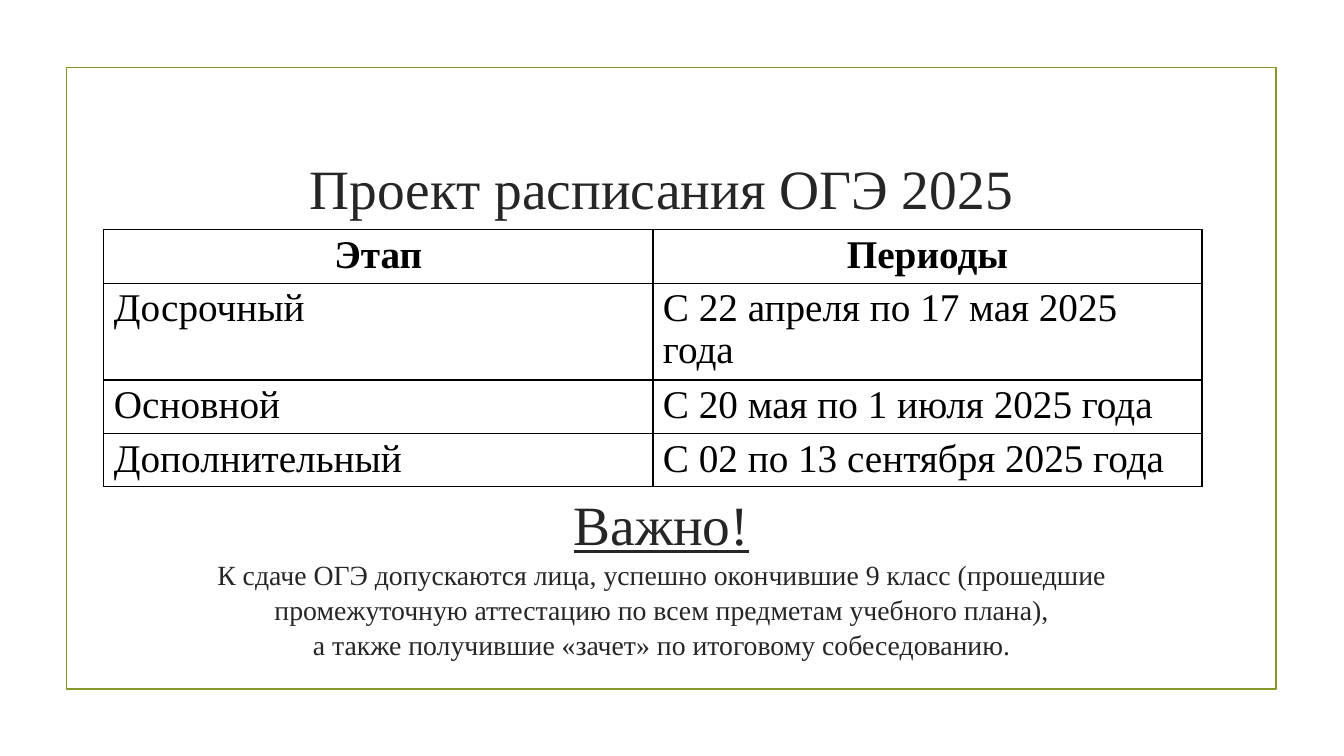
import pptx
import pptx.util
import pptx.dml.color
import pptx.enum.shapes
import pptx.enum.text
import pptx.oxml.ns
import lxml.etree

WIDE, HIGH = 13.33, 7.5
FACE = "Times New Roman"
INK, BLACK, WHITE, GREEN = "262626", "000000", "FFFFFF", "83992A"
LEFT = pptx.enum.text.PP_ALIGN.LEFT
MID = pptx.enum.text.PP_ALIGN.CENTER
STAGES = [
    ("Этап", "Периоды"),
    ("Досрочный", "С 22 апреля по 17 мая 2025 года"),
    ("Основной", "С 20 мая по 1 июля 2025 года"),
    ("Дополнительный", "С 02 по 13 сентября 2025 года"),
]
NOTES = [
    "К сдаче ОГЭ допускаются лица, успешно окончившие 9 класс (прошедшие "
    "промежуточную аттестацию по всем предметам учебного плана),",
    "а также получившие «зачет» по итоговому собеседованию.",
]


def tint(code):
    return pptx.dml.color.RGBColor.from_string(code)


def across(share):
    return pptx.util.Inches(WIDE * share / 100)


def down(share):
    return pptx.util.Inches(HIGH * share / 100)


def area(x, y, w, h):
    return across(x), down(y), across(w), down(h)


def write(para, text, size=28, color=INK, align=MID, bold=False, under=False, pitch=1.0):
    para.alignment = align
    para.line_spacing = pitch
    para.space_before = para.space_after = pptx.util.Pt(0)
    run = para.add_run()
    run.text = text
    font = run.font
    font.name, font.size = FACE, pptx.util.Pt(size)
    font.bold, font.underline = bold, under
    font.color.rgb = tint(color)


def add(node, tag, **attrs):
    return lxml.etree.SubElement(node, pptx.oxml.ns.qn(tag), **attrs)


def plain(para):
    props = para._p.get_or_add_pPr()
    props.set("marL", "0")
    props.set("indent", "0")
    add(props, "a:buNone")


def seat(holder, box, anchor):
    holder.left, holder.top, holder.width, holder.height = box
    frame = holder.text_frame
    frame.word_wrap = True
    frame.auto_size = pptx.enum.text.MSO_AUTO_SIZE.NONE
    frame.vertical_anchor = anchor
    frame.margin_top = frame.margin_bottom = 0
    return frame


def edge(cell):
    props = cell._tc.get_or_add_tcPr()
    for side in ("a:lnL", "a:lnR", "a:lnT", "a:lnB"):
        line = add(props, side, w=str(pptx.util.Pt(1)))
        add(add(line, "a:solidFill"), "a:srgbClr", val=BLACK)


def border(slide):
    rect = slide.shapes.add_shape(
        pptx.enum.shapes.MSO_SHAPE.RECTANGLE, *area(4.95, 8.93, 90, 82.27))
    rect.shadow.inherit = False
    rect.fill.background()
    rect.line.color.rgb = tint(GREEN)
    rect.line.width = pptx.util.Pt(1.25)


def dates(slide):
    rows = [7.07, 12.8, 7.07, 7.07]
    grid = slide.shapes.add_table(
        len(STAGES), 2, *area(7.73, 30.4, 81.7, sum(rows))).table
    grid.first_row = grid.horz_banding = False
    for r, texts in enumerate(STAGES):
        grid.rows[r].height = down(rows[r])
        for c, text in enumerate(texts):
            cell = grid.cell(r, c)
            edge(cell)
            cell.fill.solid()
            cell.fill.fore_color.rgb = tint(WHITE)
            write(cell.text_frame.paragraphs[0], text, color=BLACK,
                  align=LEFT if r else MID, bold=r == 0, pitch=0.97)


def main():
    deck = pptx.Presentation()
    deck.slide_width, deck.slide_height = across(100), down(100)
    slide = deck.slides.add_slide(deck.slide_layouts[1])
    anchors = pptx.enum.text.MSO_ANCHOR
    border(slide)

    title = seat(slide.shapes.title, area(9.83, 18.8, 78.77, 12), anchors.MIDDLE)
    write(title.paragraphs[0], "Проект расписания ОГЭ 2025", size=39.6)

    body = seat(slide.placeholders[1], area(9.83, 64.8, 78.77, 23.3), anchors.TOP)
    head = body.paragraphs[0]
    plain(head)
    write(head, "Важно!", size=39.6, under=True)
    for text in NOTES:
        para = body.add_paragraph()
        plain(para)
        write(para, text, size=19.8, pitch=1.05)

    dates(slide)
    deck.save("out.pptx")


if __name__ == "__main__":
    main()
